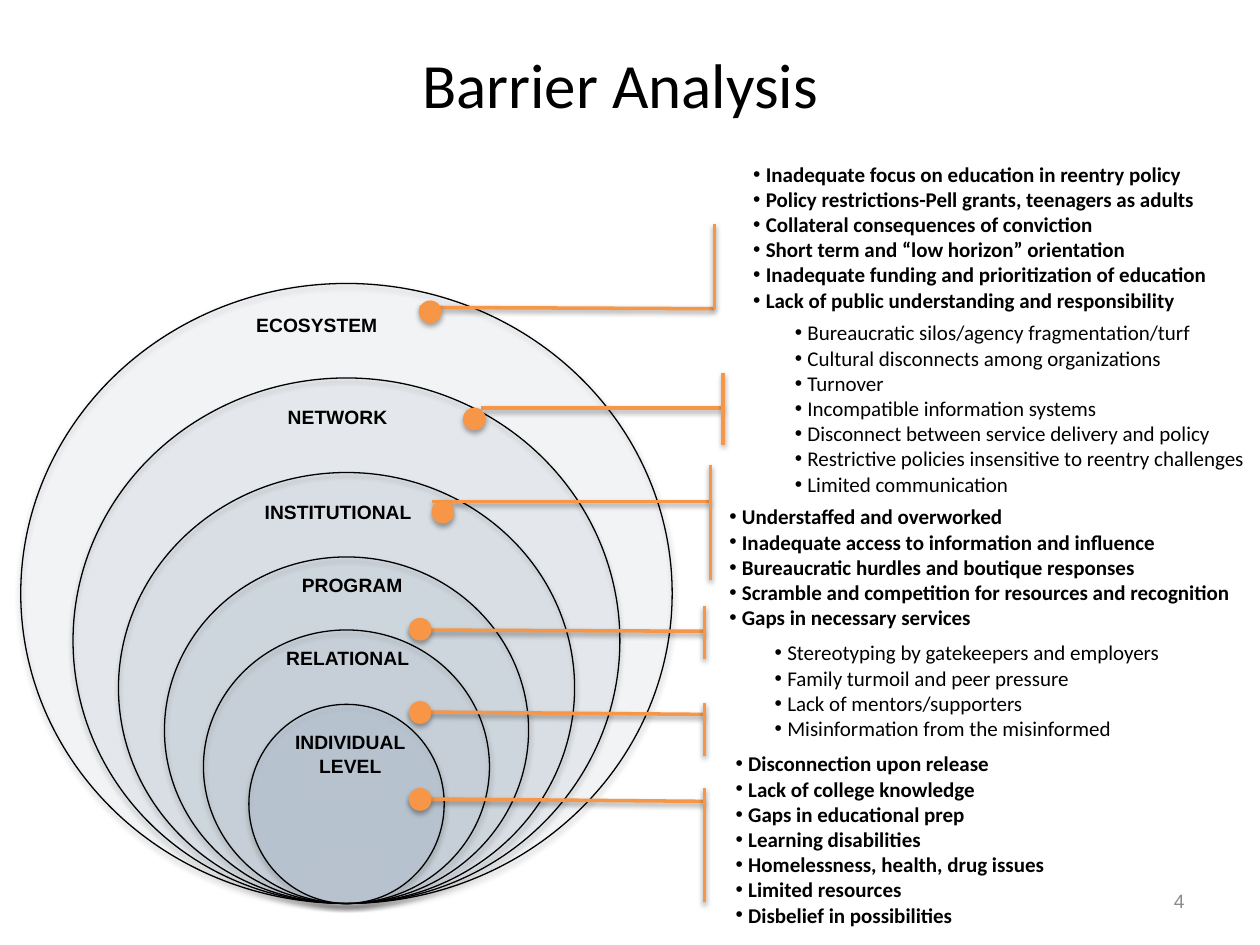
from dataclasses import dataclass

from lxml.etree import SubElement
from pptx import Presentation
from pptx.dml.color import RGBColor
from pptx.enum.shapes import MSO_CONNECTOR, MSO_SHAPE
from pptx.enum.text import MSO_ANCHOR, MSO_AUTO_SIZE, PP_ALIGN
from pptx.oxml.ns import qn
from pptx.util import Inches, Pt


@dataclass(frozen=True)
class Theme:
    ink: str = "000000"
    ring: str = "C6D9F1"
    accent: str = "F79646"
    muted: str = "8C8C8C"
    heading: str = "Calibri"
    label: str = "Arial"
    title_size: int = 36
    list_size: int = 12
    label_size: int = 11


THEME = Theme()
CENTER_X, BASE_Y = 2.75, 7.17
DOT = 0.17

# Rings, outermost first: width, height, fill opacity in percent
RINGS = [
    (5.17, 4.92, 10), (4.34, 4.17, 10), (3.62, 3.42, 10),
    (2.89, 2.75, 10), (2.27, 2.17, 10), (1.55, 1.58, 30),
]
# Ring names with their boxes
LABELS = [
    ("ECOSYSTEM", (1.93, 2.44, 1.17, 0.29)),
    ("NETWORK", (2.18, 3.17, 1, 0.29)),
    ("INSTITUTIONAL", (2, 3.92, 1.37, 0.29)),
    ("PROGRAM", (2.29, 4.5, 1.01, 0.29)),
    ("RELATIONAL", (2.17, 5.08, 1.18, 0.29)),
    ("INDIVIDUAL\nLEVEL", (2.24, 5.75, 1.08, 0.47)),
]
# Callouts: dot corner, leader from and to, bar top and bottom
CALLOUTS = [
    ((3.33, 2.39), (3.33, 2.44), (5.67, 2.45), (1.78, 2.45)),
    ((3.68, 3.24), (3.82, 3.24), (5.74, 3.24), (2.96, 3.53)),
    ((3.43, 3.98), (3.43, 3.98), (5.64, 3.98), (3.69, 4.6)),
    ((3.25, 4.91), (3.25, 5), (5.59, 5.01), (4.81, 5.23)),
    ((3.25, 5.57), (3.25, 5.65), (5.59, 5.67), (5.58, 6)),
    ((3.25, 6.26), (3.25, 6.34), (5.59, 6.36), (6.25, 7.16)),
]
# Barrier lists: box, bold, items
BARRIERS = [
    ((5.88, 1.23, 3.83, 1.31), True, [
        "Inadequate focus on education in reentry policy",
        "Policy restrictions-Pell grants, teenagers as adults",
        "Collateral consequences of conviction",
        "Short term and “low horizon” orientation",
        "Inadequate funding and prioritization of education",
        "Lack of public understanding and responsibility"]),
    ((6.21, 2.49, 3.81, 1.72), False, [
        "Bureaucratic silos/agency fragmentation/turf",
        "Cultural disconnects among organizations",
        "Turnover",
        "Incompatible information systems",
        "Disconnect between service delivery and policy",
        "Restrictive policies insensitive to reentry challenges",
        "Limited communication"]),
    ((5.69, 3.95, 4.2, 1.31), True, [
        "Understaffed and overworked",
        "Inadequate access to information and influence",
        "Bureaucratic hurdles and boutique responses",
        "Scramble and competition for resources and recognition",
        "Gaps in necessary services"]),
    ((6.05, 5.03, 3.29, 1.11), False, [
        "Stereotyping by gatekeepers and employers",
        "Family turmoil and peer pressure",
        "Lack of mentors/supporters",
        "Misinformation from the misinformed"]),
    ((5.74, 5.91, 2.66, 1.72), True, [
        "Disconnection upon release",
        "Lack of college knowledge",
        "Gaps in educational prep",
        "Learning disabilities",
        "Homelessness, health, drug issues",
        "Limited resources",
        "Disbelief in possibilities"]),
]


def inches(box):
    return [Inches(v) for v in box]


def rgb(value):
    return RGBColor.from_string(value)


def add_shadow(effects, opacity, distance):
    shadow = SubElement(effects, qn("a:outerShdw"), blurRad=str(Pt(3.1)),
                        dist=str(Pt(distance)), dir="5400000", rotWithShape="0")
    color = SubElement(shadow, qn("a:srgbClr"), val=THEME.ink)
    SubElement(color, qn("a:alpha"), val=str(opacity * 1000))


def format_font(font, color=THEME.ink, **values):
    for name, value in values.items():
        setattr(font, name, value)
    font.color.rgb = rgb(color)


def add_ellipse(s, box, fill, line, opacity=100):
    sp = s.shapes.add_shape(MSO_SHAPE.OVAL, *inches(box))
    sp.fill.solid()
    sp.fill.fore_color.rgb = rgb(fill)
    if opacity < 100:
        color = sp.fill._xPr.find(qn("a:solidFill")).find(qn("a:srgbClr"))
        SubElement(color, qn("a:alpha"), val=str(opacity * 1000))
    sp.line.color.rgb = rgb(line)
    sp.line.width = Pt(0.75)
    sp.shadow.inherit = False
    add_shadow(sp._element.spPr.find(qn("a:effectLst")), 35, 1.8)


def add_line(s, start, end):
    line = s.shapes.add_connector(MSO_CONNECTOR.STRAIGHT, *inches(start + end))
    line.line.color.rgb = rgb(THEME.accent)
    line.line.width = Pt(2)
    add_shadow(SubElement(line._element.spPr, qn("a:effectLst")), 38, 1.6)


def add_text(s, box, text, align, **font):
    tf = s.shapes.add_textbox(*inches(box)).text_frame
    tf.word_wrap = False
    p = tf.paragraphs[0]
    p.text = text
    p.alignment = align
    for r in p.runs:
        format_font(r.font, **font)
    return tf


def add_title(s, box, text):
    title = s.shapes.title
    title.left, title.top, title.width, title.height = inches(box)
    tf = title.text_frame
    tf.text = text
    tf.word_wrap = False
    tf.auto_size = MSO_AUTO_SIZE.NONE
    tf.vertical_anchor = MSO_ANCHOR.TOP
    p = tf.paragraphs[0]
    p.alignment = PP_ALIGN.LEFT
    format_font(p.runs[0].font, name=THEME.heading, size=Pt(THEME.title_size))


def add_rings(s, center_x, base_y):
    for width, height, opacity in RINGS:
        box = (center_x - width / 2, base_y - height, width, height)
        add_ellipse(s, box, THEME.ring, THEME.ink, opacity)
    for text, box in LABELS:
        add_text(s, box, text, PP_ALIGN.CENTER, name=THEME.label,
                 size=Pt(THEME.label_size), bold=True)


def add_callout(s, dot, start, end, bar):
    add_line(s, start, end)
    add_ellipse(s, (*dot, DOT, DOT), THEME.accent, THEME.accent)
    add_line(s, (end[0], bar[0]), (end[0], bar[1]))


def add_barriers(s, box, bold, items):
    tf = s.shapes.add_textbox(*inches(box)).text_frame
    tf.word_wrap = False
    for i, item in enumerate(items):
        p = tf.paragraphs[0] if i == 0 else tf.add_paragraph()
        r = p.add_run()
        r.text = item
        format_font(r.font, name=THEME.heading, size=Pt(THEME.list_size), bold=bold)
        pPr = p._p.get_or_add_pPr()
        pPr.set("marL", str(Inches(0.1)))
        pPr.set("indent", str(-Inches(0.1)))
        SubElement(pPr, qn("a:buFont"), typeface=THEME.label)
        SubElement(pPr, qn("a:buChar"), char="•")


def main():
    prs = Presentation()
    prs.slide_width, prs.slide_height = Inches(10), Inches(7.5)
    s = prs.slides.add_slide(prs.slide_layouts[5])
    add_title(s, (3.25, 0.31, 3.38, 0.71), "Barrier Analysis")
    add_rings(s, CENTER_X, BASE_Y)
    for callout in CALLOUTS:
        add_callout(s, *callout)
    for barriers in BARRIERS:
        add_barriers(s, *barriers)
    # Page number
    tf = add_text(s, (7.17, 6.95, 2.33, 0.4), "4", PP_ALIGN.RIGHT, color=THEME.muted,
                  name=THEME.label, size=Pt(THEME.label_size))
    tf.word_wrap = True
    tf.vertical_anchor = MSO_ANCHOR.MIDDLE
    prs.save("out.pptx")


if __name__ == "__main__":
    main()
